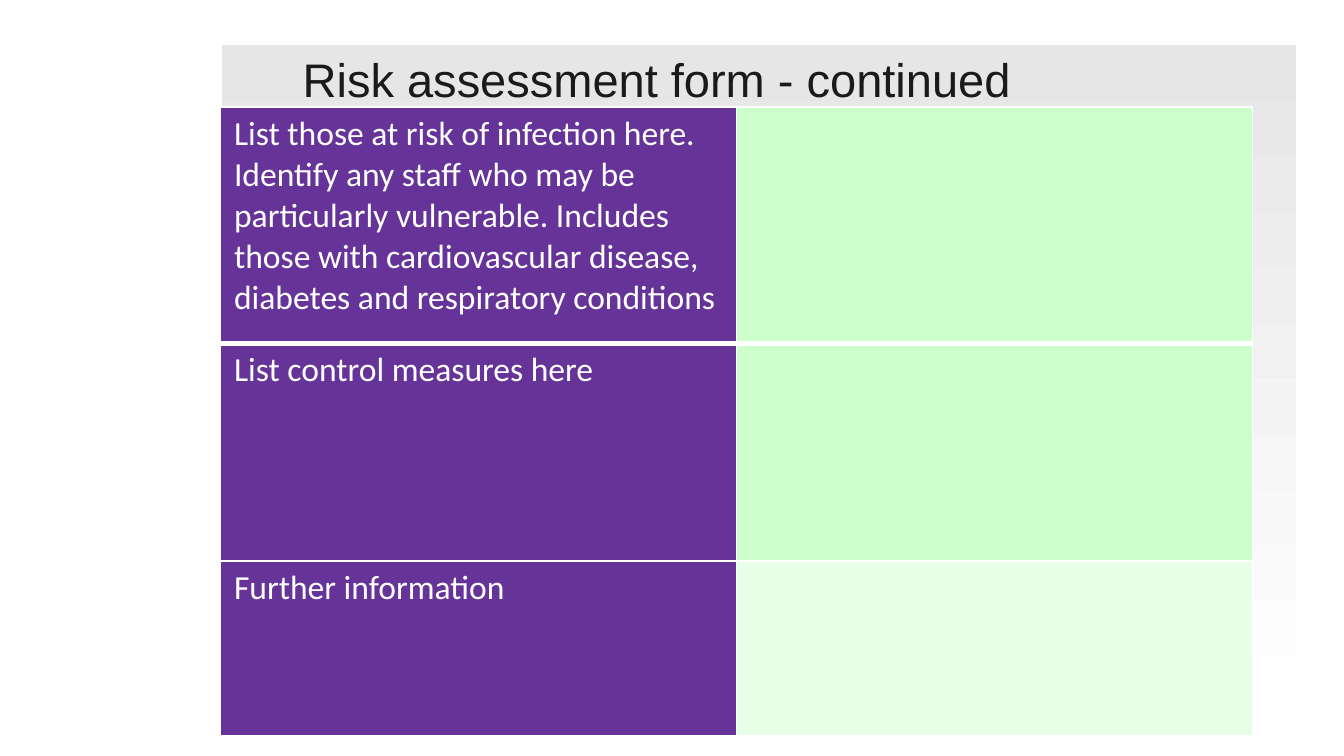
"""Build the continued risk assessment form slide."""
import pptx
import pptx.dml.color
import pptx.enum.shapes
import pptx.enum.text
import pptx.oxml
import pptx.oxml.ns
import pptx.util
from pptx.util import Cm, Pt

WHITE = "FFFFFF"
PURPLE = "663399"
GREEN = "CCFFCC"
PALE_GREEN = "E7FFE7"


def rgb(value):
    return pptx.dml.color.RGBColor.from_string(value)


class FormSlide:
    title_font, title_size, title_color = "Arial", 25.2, "1A1A1A"
    cell_font, cell_size, cell_color = "Calibri", 18, WHITE

    def __init__(self, prs):
        self.s = prs.slides.add_slide(prs.slide_layouts[5])

    def style(self, p, font, size, color):
        p.font.name = font
        p.font.size = Pt(size)
        p.font.color.rgb = rgb(color)

    def panel(self, x, y, w, h, top, bottom):
        sp = self.s.shapes.add_shape(
            pptx.enum.shapes.MSO_SHAPE.RECTANGLE, Cm(x), Cm(y), Cm(w), Cm(h))
        sp.shadow.inherit = False
        sp.line.fill.background()
        sp.fill.gradient()
        sp.fill.gradient_angle = 270
        for stop, color, position in zip(sp.fill.gradient_stops, (top, bottom), (0, 1)):
            stop.color.rgb = rgb(color)
            stop.position = position

    def borders(self, cell, widths):
        tcPr = cell._tc.get_or_add_tcPr()
        for side, width in zip("LRTB", widths):
            tcPr.append(pptx.oxml.parse_xml(
                f'<a:ln{side} {pptx.oxml.ns.nsdecls("a")} w="{Pt(width)}"><a:solidFill>'
                f'<a:srgbClr val="{WHITE}"/></a:solidFill></a:ln{side}>'))

    def table(self, x, y, col_width, heights, rows):
        table = self.s.shapes.add_table(
            len(rows), 2, Cm(x), Cm(y), Cm(2 * col_width), Cm(sum(heights))).table
        for col in table.columns:
            col.width = Cm(col_width)
        for i, (height, (label, answer_fill)) in enumerate(zip(heights, rows)):
            table.rows[i].height = Cm(height)
            widths = (1, 1, 3 if i == 1 else 1, 3 if i == 0 else 1)
            for cell, text, fill in zip(
                    table.rows[i].cells, (label, ""), (PURPLE, answer_fill)):
                self.borders(cell, widths)
                cell.fill.solid()
                cell.fill.fore_color.rgb = rgb(fill)
                cell.text = text
                self.style(cell.text_frame.paragraphs[0],
                           self.cell_font, self.cell_size, self.cell_color)

    def title(self, x, y, w, h, text):
        sp = self.s.shapes.title
        sp.left, sp.top, sp.width, sp.height = Cm(x), Cm(y), Cm(w), Cm(h)
        sp.element.getparent().append(sp.element)
        tf = sp.text_frame
        tf.text = text
        tf.word_wrap = True
        tf.auto_size = pptx.enum.text.MSO_AUTO_SIZE.NONE
        tf.vertical_anchor = pptx.enum.text.MSO_ANCHOR.BOTTOM
        tf.margin_left = tf.margin_right = tf.margin_top = tf.margin_bottom = 0
        p = tf.paragraphs[0]
        p.alignment = pptx.enum.text.PP_ALIGN.LEFT
        p.line_spacing = 0.9
        self.style(p, self.title_font, self.title_size, self.title_color)


def main():
    prs = pptx.Presentation()
    prs.slide_width, prs.slide_height = Cm(25.4), Cm(14.28)
    form = FormSlide(prs)
    form.panel(4.2, 0.85, 20.3, 12.6, "E6E6E6", WHITE)
    form.table(4.17, 2.02, 9.75, (4.46, 4.12, 3.3), (
        ("List those at risk of infection here. Identify any staff who may be "
         "particularly vulnerable. Includes those with cardiovascular disease, "
         "diabetes and respiratory conditions", GREEN),
        ("List control measures here", GREEN),
        ("Further information", PALE_GREEN),
    ))
    form.title(5.72, 1.65, 17.98, 0.38, "Risk assessment form - continued")
    prs.save("out.pptx")


if __name__ == "__main__":
    main()
